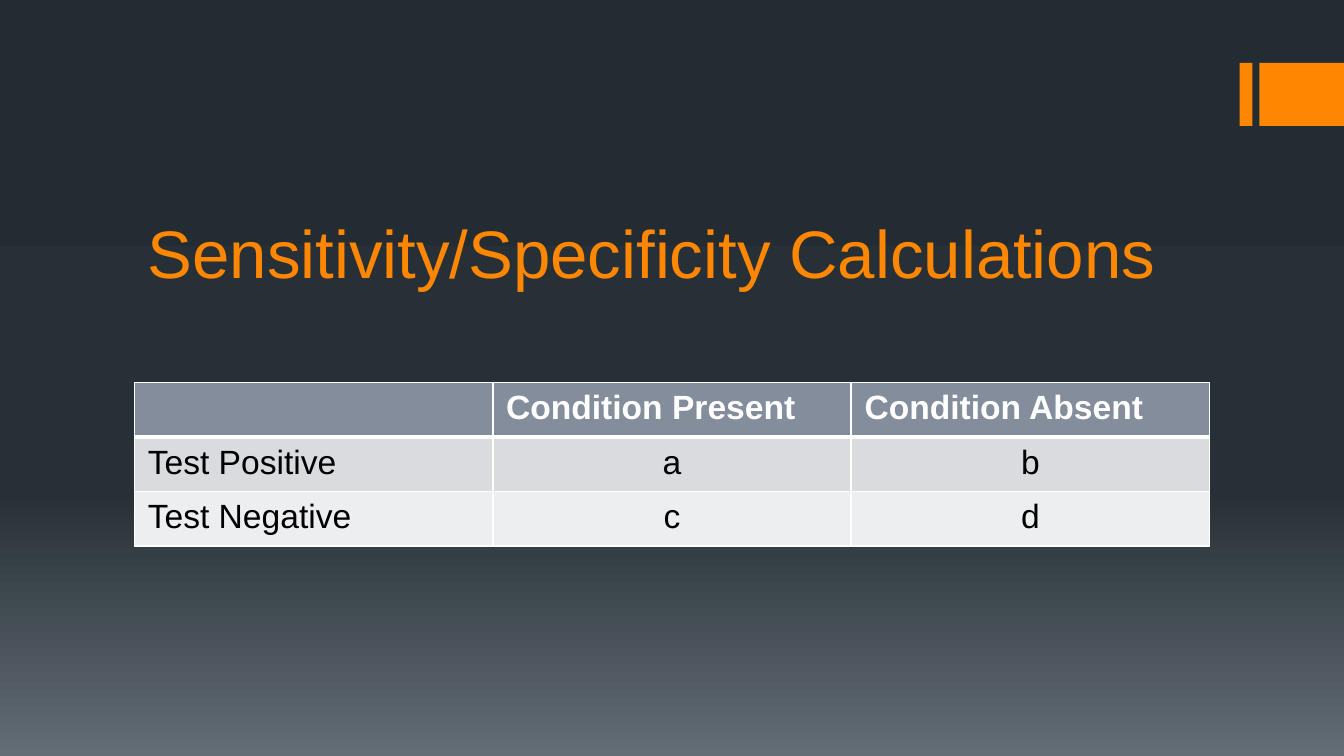
"""Build the sensitivity and specificity calculations slide."""
from dataclasses import dataclass

from lxml.etree import SubElement
from pptx import Presentation
from pptx.dml.color import RGBColor
from pptx.enum.shapes import MSO_SHAPE
from pptx.enum.text import MSO_ANCHOR, PP_ALIGN
from pptx.oxml.ns import qn
from pptx.util import Cm, Pt


@dataclass(frozen=True)
class Theme:
    font: str = "Arial"
    title_size: int = 36
    table_size: int = 18
    accent: str = "FF8600"
    header: str = "838D9B"
    bands: tuple = ("D9DBDE", "EDEEEF")
    light: str = "FFFFFF"
    dark: str = "000000"
    backdrop: tuple = ((0, "242C33"), (65, "273037"), (100, "636D76"))


class SlideBuilder:
    def __init__(self, slide, theme):
        self.s = slide
        self.theme = theme

    def style(self, p, size, color, bold=False, align=PP_ALIGN.LEFT):
        p.alignment = align
        p.font.name = self.theme.font
        p.font.size = Pt(size)
        p.font.bold = bold
        p.font.color.rgb = RGBColor.from_string(color)

    def background(self):
        fill = self.s.background.fill
        fill.gradient()
        fill.gradient_angle = 270
        stops = self.s.element.find(".//" + qn("a:gsLst"))
        for stop in list(stops):
            stops.remove(stop)
        for percent, color in self.theme.backdrop:
            stop = SubElement(stops, qn("a:gs"), pos=str(percent * 1000))
            SubElement(stop, qn("a:srgbClr"), val=color)

    def bar(self, x, y, w, h):
        sp = self.s.shapes.add_shape(MSO_SHAPE.RECTANGLE, Cm(x), Cm(y), Cm(w), Cm(h))
        sp.shadow.inherit = False
        sp.fill.solid()
        sp.fill.fore_color.rgb = RGBColor.from_string(self.theme.accent)
        sp.line.fill.background()

    def title(self, text, x, y, w, h):
        tf = self.s.shapes.add_textbox(Cm(x), Cm(y), Cm(w), Cm(h)).text_frame
        tf.word_wrap = True
        tf.vertical_anchor = MSO_ANCHOR.BOTTOM
        p = tf.paragraphs[0]
        p.text = text
        self.style(p, self.theme.title_size, self.theme.accent)

    def borders(self, cell, bottom):
        tc_pr = cell._tc.get_or_add_tcPr()
        for side, width in (("L", 1), ("R", 1), ("T", 1), ("B", bottom)):
            ln = SubElement(tc_pr, qn(f"a:ln{side}"), w=str(Pt(width)))
            fill = SubElement(ln, qn("a:solidFill"))
            SubElement(fill, qn("a:srgbClr"), val=self.theme.light)

    def table(self, rows, x, y, w, row_h):
        theme = self.theme
        table = self.s.shapes.add_table(
            len(rows), len(rows[0]), Cm(x), Cm(y), Cm(w), Cm(row_h * len(rows))
        ).table
        for i, row in enumerate(rows):
            header = i == 0
            for j, text in enumerate(row):
                cell = table.cell(i, j)
                self.borders(cell, 3 if header else 1)
                cell.fill.solid()
                color = theme.header if header else theme.bands[(i - 1) % 2]
                cell.fill.fore_color.rgb = RGBColor.from_string(color)
                p = cell.text_frame.paragraphs[0]
                p.text = text
                align = PP_ALIGN.LEFT if header or j == 0 else PP_ALIGN.CENTER
                ink = theme.light if header else theme.dark
                self.style(p, theme.table_size, ink, header, align)


def main():
    prs = Presentation()
    prs.slide_width, prs.slide_height = Cm(25.4), Cm(14.29)
    slide = SlideBuilder(prs.slides.add_slide(prs.slide_layouts[6]), Theme())
    slide.background()
    slide.bar(23.43, 1.19, 0.24, 1.19)
    slide.bar(23.8, 1.19, 1.6, 1.19)
    slide.title("Sensitivity/Specificity Calculations", 2.54, 3.23, 20.32, 2.41)
    slide.table(
        [
            ["", "Condition Present", "Condition Absent"],
            ["Test Positive", "a", "b"],
            ["Test Negative", "c", "d"],
        ],
        2.54, 7.23, 20.32, 1.03,
    )
    prs.save("out.pptx")


if __name__ == "__main__":
    main()
